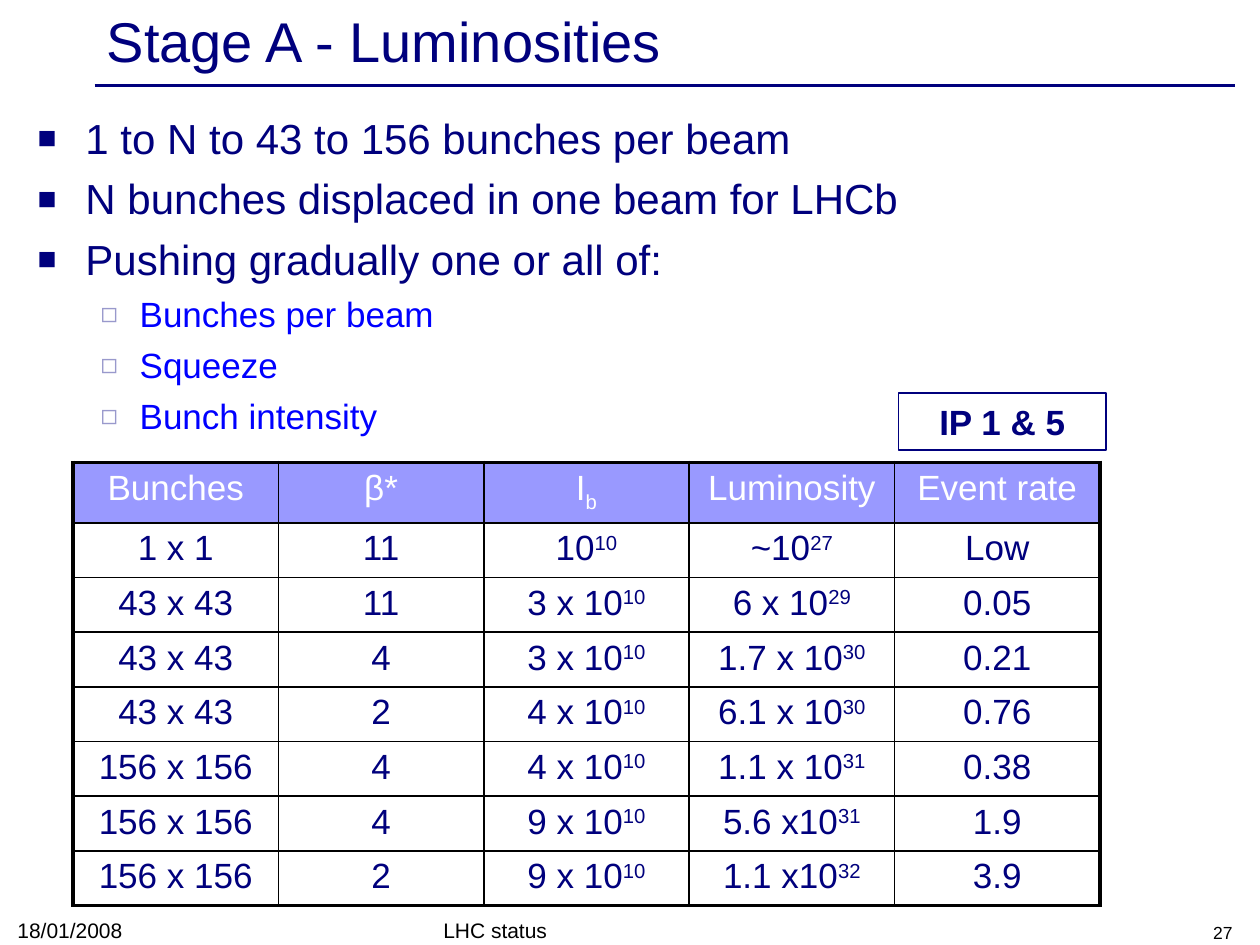
from lxml.etree import SubElement
from pptx import Presentation
from pptx.dml.color import RGBColor
from pptx.enum.shapes import MSO_CONNECTOR, MSO_SHAPE
from pptx.enum.text import MSO_ANCHOR, PP_ALIGN
from pptx.oxml import parse_xml
from pptx.oxml.ns import nsdecls, qn
from pptx.util import Inches, Pt

NAVY = RGBColor(0x00, 0x00, 0x7D)
BLUE = RGBColor(0x00, 0x00, 0xFF)
LILAC = RGBColor(0x99, 0x99, 0xFF)
GREY_LILAC = RGBColor(0x99, 0x99, 0xCC)
BLACK = RGBColor(0x00, 0x00, 0x00)
WHITE = RGBColor(0xFF, 0xFF, 0xFF)

TITLE = "Stage A - Luminosities"
BULLETS = [
    (0, "1 to N to 43 to 156 bunches per beam"),
    (0, "N bunches displaced in one beam for LHCb"),
    (0, "Pushing gradually one or all of:"),
    (1, "Bunches per beam"),
    (1, "Squeeze"),
    (1, "Bunch intensity"),
]
LEVELS = [
    {"left": 0.38, "hang": 0.38, "mark": "■", "mark_color": NAVY,
     "mark_size": 75, "size": 24, "color": NAVY, "before": 6},
    {"left": 0.81, "hang": 0.31, "mark": "◻", "mark_color": GREY_LILAC,
     "mark_size": 80, "size": 20, "color": BLUE, "before": 5},
]
FOOTERS = [
    ("18/01/2008", (0.04, 7.24, 2.33, 0.29), 12, PP_ALIGN.LEFT),
    ("LHC status", (3.42, 7.25, 3.17, 0.28), 12, PP_ALIGN.LEFT),
    ("27", (7.55, 7.25, 2.33, 0.28), 10, PP_ALIGN.RIGHT),
]
BADGE = "IP 1 & 5"
ROWS = [
    ("Bunches", "β*", "I_b", "Luminosity", "Event rate"),
    ("1 x 1", "11", "10^10", "~10^27", "Low"),
    ("43 x 43", "11", "3 x 10^10", "6 x 10^29", "0.05"),
    ("43 x 43", "4", "3 x 10^10", "1.7 x 10^30", "0.21"),
    ("43 x 43", "2", "4 x 10^10", "6.1 x 10^30", "0.76"),
    ("156 x 156", "4", "4 x 10^10", "1.1 x 10^31", "0.38"),
    ("156 x 156", "4", "9 x 10^10", "5.6 x10^31", "1.9"),
    ("156 x 156", "2", "9 x 10^10", "1.1 x10^32", "3.9"),
]
SHIFTS = {"^": "30000", "_": "-25000"}
COLUMN_WIDTH = 1.63
ROW_HEIGHT = 0.38
THICK, THIN = 2.25, 1


def add_span(para, text, size, color, bold=False, baseline=None):
    span = para.add_run()
    span.text = text
    formats = {"name": "Arial", "size": Pt(size), "bold": bold}
    for name, value in formats.items():
        setattr(span.font, name, value)
    span.font.color.rgb = color
    if baseline:
        span._r.get_or_add_rPr().set("baseline", baseline)


def add_scripted(para, text, size, color):
    for mark, baseline in SHIFTS.items():
        if mark in text:
            base, script = text.split(mark)
            add_span(para, base, size, color)
            add_span(para, script, size, color, baseline=baseline)
            return
    add_span(para, text, size, color)


def add_box(page, place, anchor):
    box = page.shapes.add_textbox(*map(Inches, place))
    box.text_frame.word_wrap = True
    box.text_frame.vertical_anchor = anchor
    return box.text_frame


def set_bullet(para, level):
    properties = para._p.get_or_add_pPr()
    properties.set("marL", str(Inches(level["left"])))
    properties.set("indent", str(-Inches(level["hang"])))
    color = SubElement(properties, qn("a:buClr"))
    SubElement(color, qn("a:srgbClr"), val=str(level["mark_color"]))
    SubElement(properties, qn("a:buSzPct"), val=str(level["mark_size"] * 1000))
    SubElement(properties, qn("a:buFont"), typeface="Arial")
    SubElement(properties, qn("a:buChar"), char=level["mark"])


def set_borders(cell, widths):
    properties = cell._tc.get_or_add_tcPr()
    for index, (side, width) in enumerate(widths.items()):
        properties.insert(index, parse_xml(
            f'<a:{side} {nsdecls("a")} w="{Pt(width)}"><a:solidFill>'
            f'<a:srgbClr val="{BLACK}"/></a:solidFill></a:{side}>'))


def add_rule(page):
    rule = page.shapes.add_connector(
        MSO_CONNECTOR.STRAIGHT, *map(Inches, (0.75, 0.68, 9.8, 0.68)))
    rule.line.color.rgb = NAVY
    rule.line.width = Pt(2)
    SubElement(rule._element.spPr, qn("a:effectLst"))


def add_bullets(page):
    frame = add_box(page, (0.2, 0.84, 8.92, 2.83), MSO_ANCHOR.TOP)
    for index, (depth, text) in enumerate(BULLETS):
        para = frame.add_paragraph() if index else frame.paragraphs[0]
        level = LEVELS[depth]
        para.level = depth
        set_bullet(para, level)
        para.space_before = Pt(level["before"] if index else 0)
        add_span(para, text, level["size"], level["color"])


def add_luminosity_table(page):
    row_count, column_count = len(ROWS), len(ROWS[0])
    table = page.shapes.add_table(
        row_count, column_count, Inches(0.58), Inches(3.67),
        Inches(COLUMN_WIDTH * column_count),
        Inches(ROW_HEIGHT * row_count)).table
    table.first_row = table.horz_banding = False
    for row, values in enumerate(ROWS):
        for column, text in enumerate(values):
            cell = table.cell(row, column)
            if row == 0:
                cell.fill.solid()
                cell.fill.fore_color.rgb = LILAC
            else:
                cell.fill.background()
            set_borders(cell, {
                "lnL": THICK if column == 0 else THIN,
                "lnR": THICK if column == column_count - 1 else THIN,
                "lnT": THICK if row == 0 else THIN,
                "lnB": THICK if row == row_count - 1 else THIN,
            })
            para = cell.text_frame.paragraphs[0]
            para.alignment = PP_ALIGN.CENTER
            add_scripted(para, text, 20, NAVY if row else WHITE)


def add_badge(page):
    badge = page.shapes.add_shape(
        MSO_SHAPE.RECTANGLE, *map(Inches, (7.13, 3.12, 1.65, 0.45)))
    badge.shadow.inherit = False
    badge.fill.background()
    badge.line.color.rgb = NAVY
    badge.line.width = Pt(1)
    para = badge.text_frame.paragraphs[0]
    para.alignment = PP_ALIGN.CENTER
    add_span(para, BADGE, 20, NAVY, bold=True)


def main():
    deck = Presentation()
    deck.slide_width, deck.slide_height = Inches(10), Inches(7.5)
    page = deck.slides.add_slide(deck.slide_layouts[6])
    add_rule(page)
    for text, place, size, alignment in FOOTERS:
        para = add_box(page, place, MSO_ANCHOR.BOTTOM).paragraphs[0]
        para.alignment = alignment
        add_span(para, text, size, BLACK)
    title = add_box(page, (0.75, 0.03, 9, 0.57), MSO_ANCHOR.MIDDLE)
    add_span(title.paragraphs[0], TITLE, 32, NAVY)
    add_bullets(page)
    add_luminosity_table(page)
    add_badge(page)
    deck.save("out.pptx")


if __name__ == "__main__":
    main()
